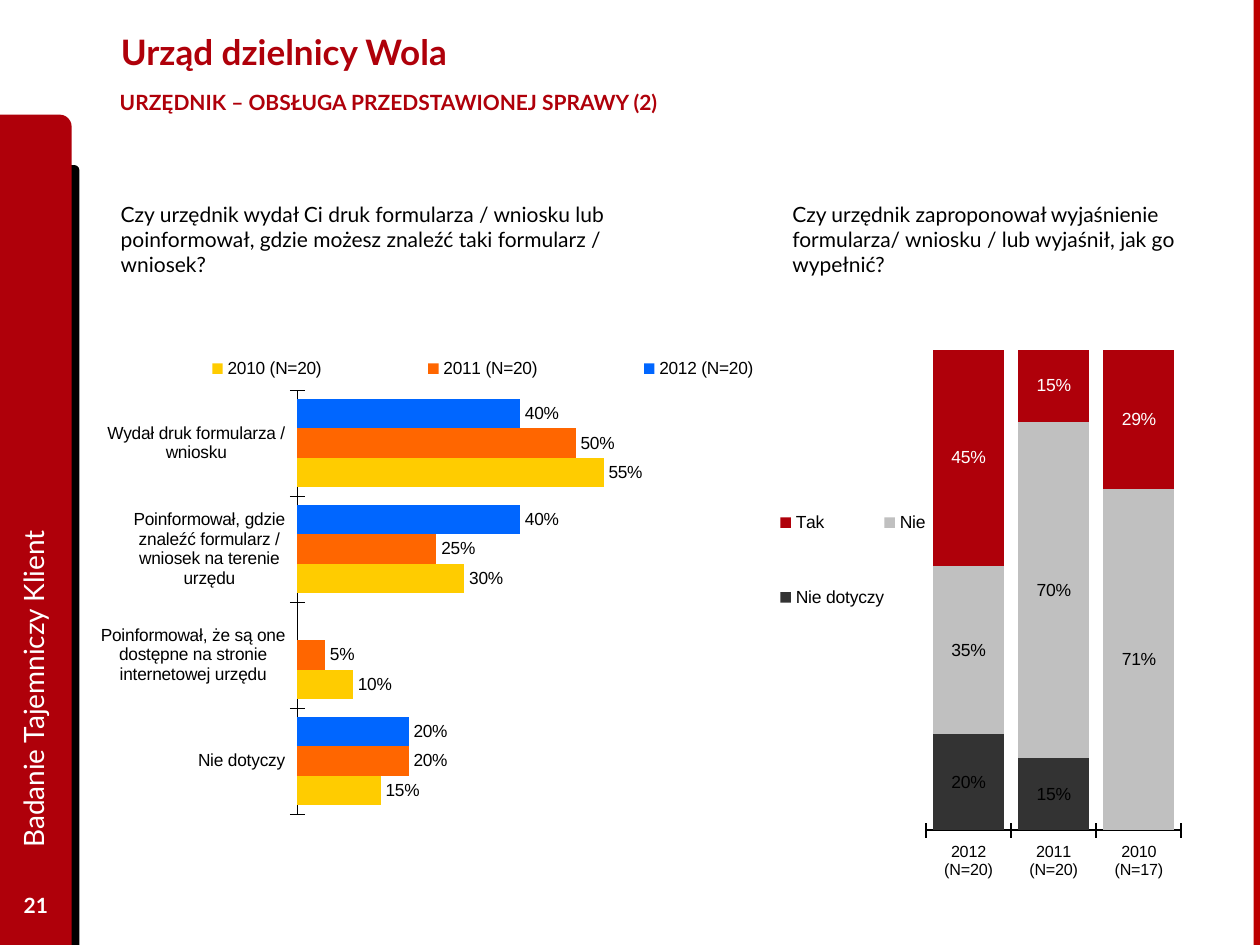
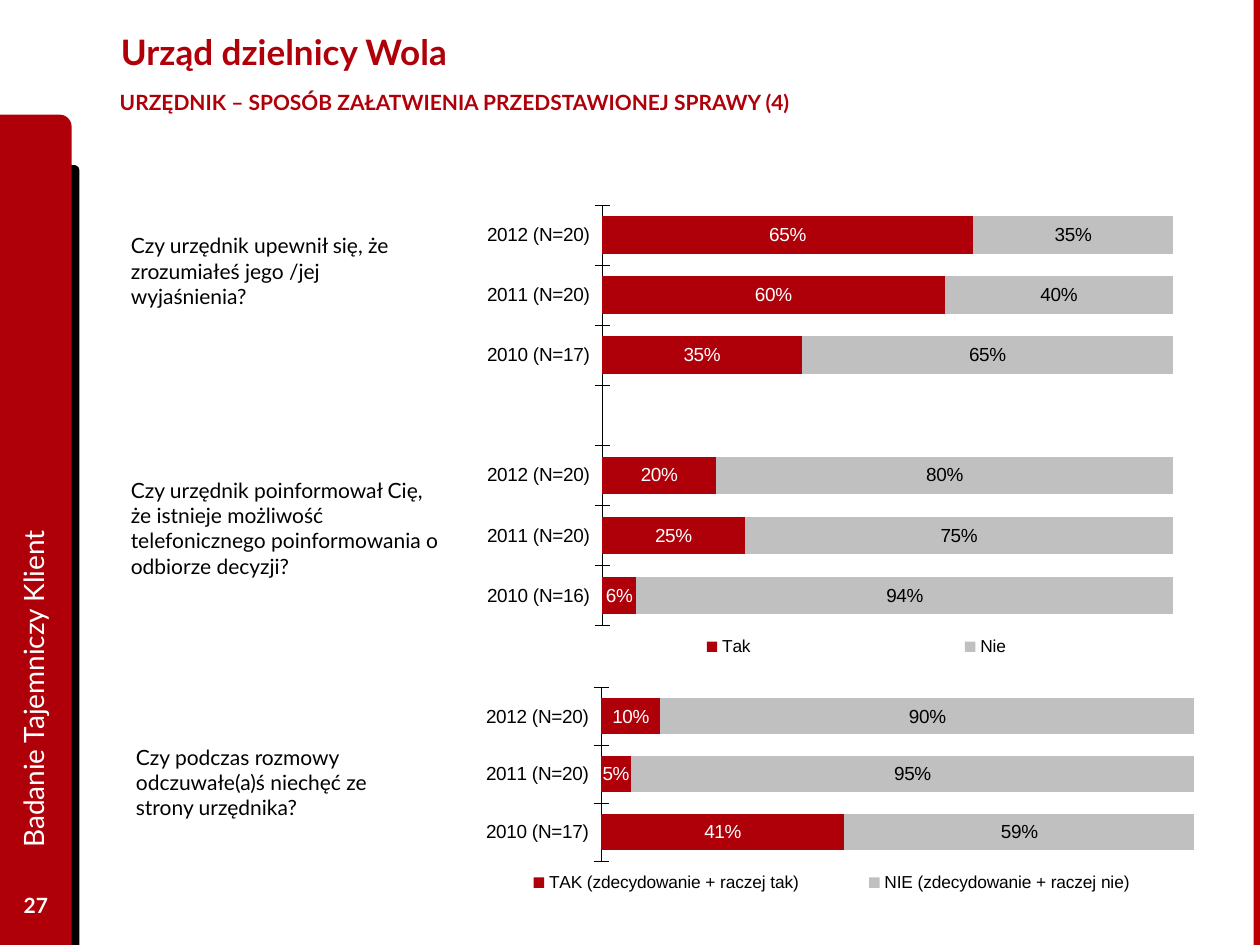
"""Build two survey-result slides for the Wola district office."""
from dataclasses import dataclass

from lxml import etree
from pptx import Presentation
from pptx.chart.data import CategoryChartData
from pptx.dml.color import RGBColor
from pptx.enum.chart import XL_CHART_TYPE, XL_LABEL_POSITION, XL_LEGEND_POSITION, XL_TICK_MARK
from pptx.enum.shapes import MSO_SHAPE
from pptx.enum.text import MSO_ANCHOR, MSO_AUTO_SIZE, PP_ALIGN
from pptx.oxml.ns import qn
from pptx.util import Pt

COLUMNS = XL_CHART_TYPE.COLUMN_STACKED_100
CLUSTERED = XL_CHART_TYPE.BAR_CLUSTERED
STACKED = XL_CHART_TYPE.BAR_STACKED
LEGEND_LEFT = XL_LEGEND_POSITION.LEFT
LEGEND_RIGHT = XL_LEGEND_POSITION.RIGHT
LEGEND_BOTTOM = XL_LEGEND_POSITION.BOTTOM
CENTER, OUTSIDE = XL_LABEL_POSITION.CENTER, XL_LABEL_POSITION.OUTSIDE_END
CROSS, NO_TICK = XL_TICK_MARK.CROSS, XL_TICK_MARK.NONE
RECTANGLE = MSO_SHAPE.RECTANGLE
ROUND_CORNER = MSO_SHAPE.ROUND_1_RECTANGLE
TOP, MIDDLE = MSO_ANCHOR.TOP, MSO_ANCHOR.MIDDLE
ALIGN_LEFT, ALIGN_CENTER = PP_ALIGN.LEFT, PP_ALIGN.CENTER
GROW, FIXED = MSO_AUTO_SIZE.SHAPE_TO_FIT_TEXT, MSO_AUTO_SIZE.NONE
TITLE_ONLY = 5


@dataclass(frozen=True)
class Theme:
    """Colours, fonts and type sizes."""
    red: str = "AF000A"
    edge: str = "BD0000"
    black: str = "000000"
    white: str = "FFFFFF"
    silver: str = "C0C0C0"
    charcoal: str = "333333"
    blue: str = "0066FF"
    orange: str = "FF6600"
    yellow: str = "FFCC00"
    text_font: str = "Lato"
    chart_font: str = "Arial"
    title_size: float = 20
    side_size: float = 16
    body_size: float = 12


THEME = Theme()
TITLE = "Urząd dzielnicy Wola"
SIDE_TITLE = "Badanie Tajemniczy Klient"
BANDS = [
    (ROUND_CORNER, (28.1, 94.3, 17.3, 445.7), THEME.black),
    (ROUND_CORNER, (0, 65.5, 41, 474.5), THEME.red),
    (RECTANGLE, (716.4, 0, 3.6, 540), THEME.edge),
]
YEARS = ["2012 (N=20)", "2011 (N=20)", "2010 (N=17)"]

SLIDES = [
    {
        "number": "21",
        "subtitle": "URZĘDNIK – OBSŁUGA PRZEDSTAWIONEJ SPRAWY (2)",
        "questions": [
            ("Czy urzędnik zaproponował wyjaśnienie formularza/ wniosku / lub wyjaśnił, "
             "jak go wypełnić?", (445.7, 111.6, 259.9, 51.1)),
            ("Czy urzędnik wydał Ci druk formularza / wniosku lub poinformował, gdzie "
             "możesz znaleźć taki formularz / wniosek?", (61.9, 111.6, 303.8, 51.1)),
        ],
        "charts": [
            {
                "kind": COLUMNS, "box": (445.7, 179.3, 231.8, 343.4),
                "plot": (0.36, 0.06, 0.63, 0.8),
                "legend": LEGEND_LEFT, "legend_box": (0, 0.24, 0.36, 0.34),
                "sizes": {"axis": 9.2, "label": 10, "legend": 10},
                "gap": 20, "axis_line": 1.17,
                "categories": YEARS,
                "series": [
                    ("Nie dotyczy", (0.2, 0.15, None), THEME.charcoal, THEME.black),
                    ("Nie", (0.35, 0.7, 0.71), THEME.silver, THEME.black),
                    ("Tak", (0.45, 0.15, 0.29), THEME.red, THEME.white),
                ],
            },
            {
                "kind": CLUSTERED, "box": (57.6, 193, 430.6, 272.2),
                "plot": (0.25, 0.11, 0.75, 0.89),
                "legend": LEGEND_RIGHT, "legend_box": (0, 0.03, 1, 0.07),
                "sizes": {"axis": 10, "label": 10, "legend": 10},
                "gap": 60, "axis_line": 0.25,
                "categories": [
                    "Wydał druk formularza / wniosku",
                    "Poinformował, gdzie znaleźć formularz / wniosek na terenie urzędu",
                    "Poinformował, że są one dostępne na stronie internetowej urzędu",
                    "Nie dotyczy",
                ],
                "series": [
                    ("2012 (N=20)", (0.4, 0.4, None, 0.2), THEME.blue, THEME.black),
                    ("2011 (N=20)", (0.5, 0.25, 0.05, 0.2), THEME.orange, THEME.black),
                    ("2010 (N=20)", (0.55, 0.3, 0.1, 0.15), THEME.yellow, THEME.black),
                ],
            },
        ],
    },
    {
        "number": "27",
        "subtitle": "URZĘDNIK – SPOSÓB ZAŁATWIENIA PRZEDSTAWIONEJ SPRAWY (4)",
        "questions": [
            ("Czy urzędnik upewnił się, że zrozumiałeś jego /jej wyjaśnienia?",
             (67.7, 129.6, 171.4, 51.1)),
            ("Czy urzędnik poinformował Cię, że istnieje możliwość telefonicznego "
             "poinformowania o odbiorze decyzji?", (67.7, 269.3, 190.1, 65.5)),
            ("Czy podczas rozmowy odczuwałe(a)ś niechęć ze strony urzędnika?",
             (70.6, 421.9, 167.8, 51.1)),
        ],
        "charts": [
            {
                "kind": STACKED, "box": (54.7, 391.7, 627.8, 125.3),
                "plot": (0.46, 0.01, 0.54, 0.79),
                "legend": LEGEND_BOTTOM, "legend_box": (0.34, 0.83, 0.66, 0.14),
                "sizes": {"axis": 10.8, "label": 10.8, "legend": 9.9},
                "gap": 60, "axis_line": 0.23,
                "categories": YEARS,
                "series": [
                    ("TAK (zdecydowanie + raczej tak)", (0.1, 0.05, 0.41),
                     THEME.red, THEME.white),
                    ("NIE (zdecydowanie + raczej nie)", (0.9, 0.95, 0.59),
                     THEME.silver, THEME.black),
                ],
            },
            {
                "kind": STACKED, "box": (100.8, 114.5, 593.3, 267.1),
                "plot": (0.41, 0.01, 0.55, 0.9),
                "legend": LEGEND_RIGHT, "legend_box": (0.31, 0.92, 0.69, 0.07),
                "sizes": {"axis": 10.8, "label": 10.8, "legend": 9.9},
                "gap": 60, "axis_line": 0.23,
                "categories": YEARS + ["", "2012 (N=20)", "2011 (N=20)", "2010 (N=16)"],
                "series": [
                    ("Tak", (0.65, 0.6, 0.35, None, 0.2, 0.25, 0.06),
                     THEME.red, THEME.white),
                    ("Nie", (0.35, 0.4, 0.65, None, 0.8, 0.75, 0.94),
                     THEME.silver, THEME.black),
                ],
            },
        ],
    },
]


def points(box):
    """Turn a box of numbers into point lengths."""
    return [Pt(value) for value in box]


def set_font(font, size, color, name=THEME.chart_font, bold=False):
    """Format a font."""
    font.size, font.name, font.bold = Pt(size), name, bold
    font.color.rgb = RGBColor.from_string(color)


def write(shape, text, size=THEME.body_size, color=THEME.black, bold=False,
          align=ALIGN_LEFT, anchor=TOP, wrap=True, auto_size=FIXED, side_inset=7.2):
    """Put formatted text in a shape."""
    frame = shape.text_frame
    frame.text = text
    frame.word_wrap, frame.auto_size, frame.vertical_anchor = wrap, auto_size, anchor
    frame.margin_left = frame.margin_right = Pt(side_inset)
    paragraph = frame.paragraphs[0]
    paragraph.alignment = align
    set_font(paragraph.runs[0].font, size, color, THEME.text_font, bold)


def set_layout(parent, index, box, inner=False):
    """Give a plot area or legend a manual layout."""
    for old_layout in parent.findall(qn("c:layout")):
        parent.remove(old_layout)
    layout = etree.Element(qn("c:layout"))
    parent.insert(index, layout)
    manual = etree.SubElement(layout, qn("c:manualLayout"))
    settings = [("layoutTarget", "inner")] if inner else []
    settings += [("xMode", "edge"), ("yMode", "edge")]
    settings += zip("xywh", box)
    for tag, value in settings:
        etree.SubElement(manual, qn(f"c:{tag}")).set("val", str(value))


def add_percent_chart(slide, content):
    """Add a bar or column chart of percentages."""
    data = CategoryChartData(number_format="0%")
    data.categories = content["categories"]
    for name, values, *_ in content["series"]:
        data.add_series(name, values)
    kind, sizes = content["kind"], content["sizes"]
    chart = slide.shapes.add_chart(kind, *points(content["box"]), data).chart
    chart.has_title = False
    set_font(chart.font, sizes["axis"], THEME.black)

    axis = chart.category_axis
    axis.major_tick_mark, axis.minor_tick_mark = CROSS, NO_TICK
    axis.reverse_order = kind != COLUMNS
    axis.has_major_gridlines = False
    axis.format.line.width = Pt(content["axis_line"])
    axis.format.line.color.rgb = RGBColor.from_string(THEME.black)
    set_font(axis.tick_labels.font, sizes["axis"], THEME.black)
    chart.value_axis.visible = False
    chart.value_axis.has_major_gridlines = False
    chart.value_axis.minimum_scale, chart.value_axis.maximum_scale = 0, 1

    plot = chart.plots[0]
    plot.gap_width, plot.vary_by_categories = content["gap"], False
    plot.overlap = 0 if kind == CLUSTERED else 100
    for series, (_, _, fill, label_color) in zip(plot.series, content["series"]):
        series.invert_if_negative = False
        series.format.fill.solid()
        series.format.fill.fore_color.rgb = RGBColor.from_string(fill)
        labels = series.data_labels
        labels.show_value = True
        labels.number_format, labels.number_format_is_linked = "0%", False
        labels.position = OUTSIDE if kind == CLUSTERED else CENTER
        set_font(labels.font, sizes["label"], label_color)

    chart.has_legend = True
    chart.legend.position = content["legend"]
    chart.legend.include_in_layout = False
    set_font(chart.legend.font, sizes["legend"], THEME.black)
    set_layout(next(chart.element.iter(qn("c:plotArea"))), 0, content["plot"], inner=True)
    set_layout(next(chart.element.iter(qn("c:legend"))), 1, content["legend_box"])


def add_frame(slide, number, subtitle):
    """Add the bands, headings and page number every slide has."""
    for preset, box, color in BANDS:
        band = slide.shapes.add_shape(preset, *points(box))
        band.shadow.inherit = False
        band.fill.solid()
        band.fill.fore_color.rgb = RGBColor.from_string(color)
        band.line.fill.background()
    title = slide.shapes.title
    title.left, title.top, title.width, title.height = points((61.9, 3.6, 559.4, 51.8))
    write(title, TITLE, size=THEME.title_size, color=THEME.red, bold=True, anchor=MIDDLE)
    add_text = slide.shapes.add_textbox
    write(add_text(*points((54, 47.5, 277.2, 23.8))), subtitle, color=THEME.red,
          bold=True, wrap=False, side_inset=14.4)
    write(add_text(*points((0, 502.6, 41, 28.8))), number, color=THEME.white,
          bold=True, align=ALIGN_CENTER, anchor=MIDDLE)
    side_title = add_text(*points((-188.6, 265.7, 414.7, 36.7)))
    side_title.rotation = 270
    write(side_title, SIDE_TITLE, size=THEME.side_size, color=THEME.white, anchor=MIDDLE)


def main():
    """Build and save the presentation."""
    presentation = Presentation()
    presentation.slide_width, presentation.slide_height = Pt(720), Pt(540)
    for content in SLIDES:
        slide = presentation.slides.add_slide(presentation.slide_layouts[TITLE_ONLY])
        add_frame(slide, content["number"], content["subtitle"])
        for chart_content in content["charts"]:
            add_percent_chart(slide, chart_content)
        for question, box in content["questions"]:
            write(slide.shapes.add_textbox(*points(box)), question, auto_size=GROW)
    presentation.save("out.pptx")


if __name__ == "__main__":
    main()
